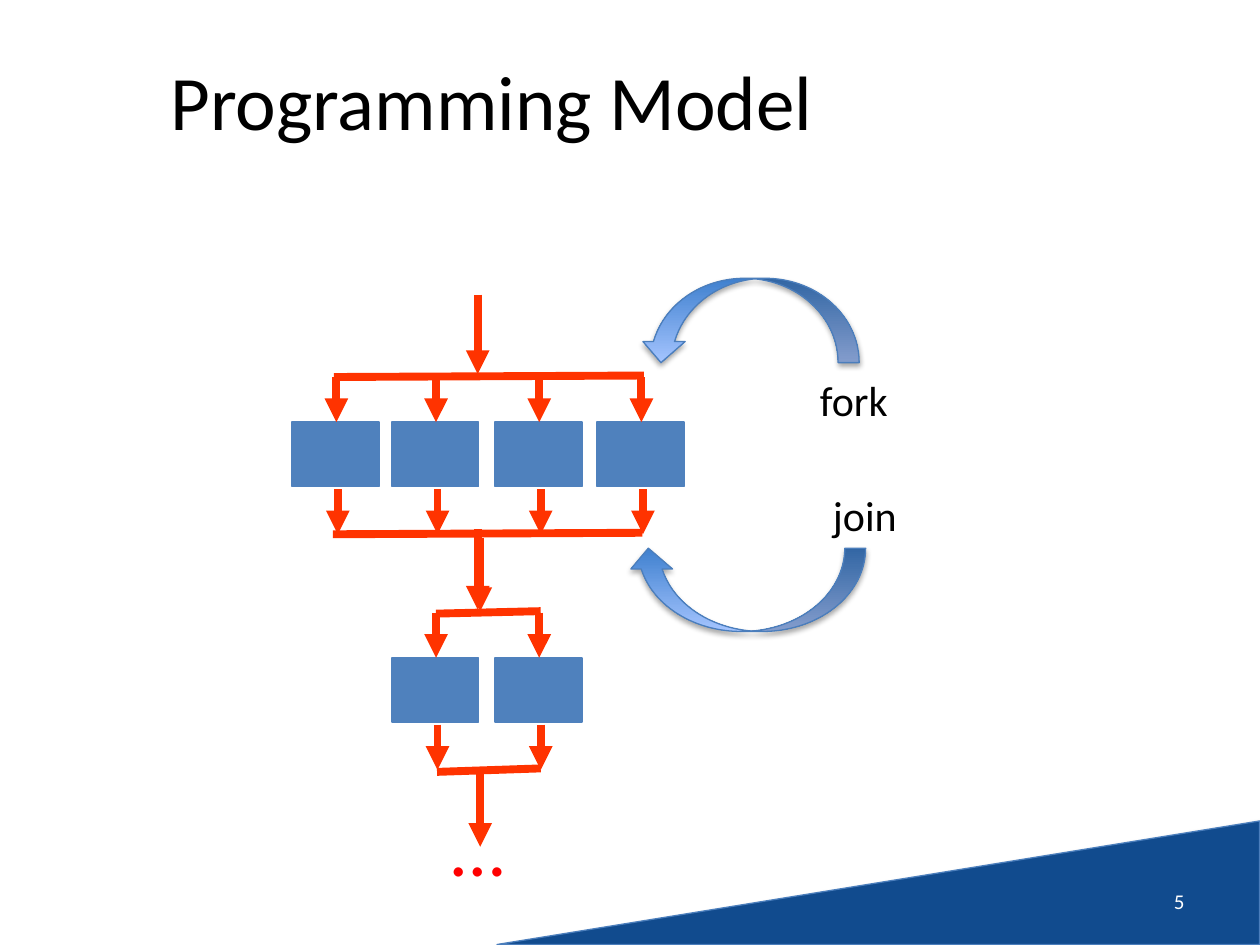
from lxml.etree import SubElement
from pptx import Presentation
from pptx.dml.color import RGBColor
from pptx.enum.shapes import MSO_CONNECTOR as Connector, MSO_SHAPE as Shape
from pptx.enum.text import MSO_ANCHOR as Anchor, MSO_AUTO_SIZE as AutoSize, PP_ALIGN as Align
from pptx.oxml.ns import qn
from pptx.util import Cm, Pt

COLORS = {
    "corner": "114B8E", "outline": "4B7EBC", "task": "4F81BD",
    "flow": "FF3300", "dots": "FF0000", "black": "000000", "white": "FFFFFF",
    "curve_start": "3F80CE", "curve_end": "A4C4FF",
}
FONT = "Calibri"

# Task grid, in centimetres
TASK_LEFTS = [5.89, 7.9, 9.98, 12.04]
TASK_W, TASK_H = 1.75, 1.3
IN_X, OUT_X = 0.89, 0.92        # arrow offsets from a task's left edge
IN_RISE = 0.91                  # fork bar above a task's top
OUT_START, OUT_END = 1.35, 2.26 # arrow below a task's top


def rgb(name):
    return RGBColor.from_string(COLORS[name])


def add_text(slide, text, box, size, color="black", align=Align.LEFT,
             anchor=Anchor.TOP, wrap=False):
    frame = slide.shapes.add_textbox(*map(Cm, box)).text_frame
    frame.word_wrap = wrap
    frame.auto_size = AutoSize.NONE if wrap else AutoSize.SHAPE_TO_FIT_TEXT
    frame.vertical_anchor = anchor
    paragraph = frame.paragraphs[0]
    paragraph.text = text
    paragraph.alignment = align
    paragraph.font.name = FONT
    paragraph.font.size = Pt(size)
    paragraph.font.color.rgb = rgb(color)


def add_outlined(slide, kind, box, outline, width, rotation=0):
    shape = slide.shapes.add_shape(kind, *map(Cm, box))
    shape.rotation = rotation
    shape.shadow.inherit = False
    shape.line.color.rgb = rgb(outline)
    shape.line.width = Pt(width)
    return shape


def fill_solid(shape, color):
    shape.fill.solid()
    shape.fill.fore_color.rgb = rgb(color)


def add_soft_shadow(shape):
    effects = shape._element.spPr.find(qn("a:effectLst"))
    shadow = SubElement(effects, qn("a:outerShdw"), blurRad="40000",
                        dist="23000", dir="5400000", rotWithShape="0")
    color = SubElement(shadow, qn("a:srgbClr"), val=COLORS["black"])
    SubElement(color, qn("a:alpha"), val="35000")


def add_curved_arrow(slide, kind, box):
    arrow = add_outlined(slide, kind, box, "outline", 0.75, rotation=180)
    arrow.fill.gradient()
    arrow.fill.gradient_angle = 90
    for stop, color in zip(arrow.fill.gradient_stops, ("curve_start", "curve_end")):
        stop.color.rgb = rgb(color)
    add_soft_shadow(arrow)


def add_flow(slide, x1, y1, x2, y2, arrow=True):
    flow = slide.shapes.add_connector(Connector.STRAIGHT, *map(Cm, (x1, y1, x2, y2)))
    flow.line.color.rgb = rgb("flow")
    flow.line.width = Pt(4.5)
    if arrow:
        SubElement(flow.line._get_or_add_ln(), qn("a:tailEnd"), type="triangle")
    SubElement(flow._element.spPr, qn("a:effectLst"))


def add_stage(slide, lefts, top, entry, fork_bar, join_bar):
    """One fork-join stage: entry arrow, parallel tasks, bars and exit arrow."""
    add_flow(slide, 9.63, top + entry[0], 9.63, top + entry[1])
    for left in lefts:
        task = add_outlined(slide, Shape.RECTANGLE, (left, top, TASK_W, TASK_H), "task", 1)
        fill_solid(task, "task")
        add_flow(slide, left + OUT_X, top + OUT_START, left + OUT_X, top + OUT_END)
        add_flow(slide, left + IN_X, top - IN_RISE, left + IN_X, top)
    for x1, y1, x2, y2 in (fork_bar, join_bar):
        add_flow(slide, x1, top + y1, x2, top + y2, arrow=False)
    add_flow(slide, 9.68, top + 2.34, 9.68, top + 3.81)


def main():
    prs = Presentation()
    prs.slide_width, prs.slide_height = Cm(25.4), Cm(19.05)
    slide = prs.slides.add_slide(prs.slide_layouts[6])

    # Corner decoration, title and page number
    corner = add_outlined(slide, Shape.RIGHT_TRIANGLE, (16.46, 10.11, 2.49, 15.37),
                          "outline", 0.75, rotation=270)
    fill_solid(corner, "corner")
    add_soft_shadow(corner)
    add_text(slide, "Programming Model", (0.48, 0.33, 18.87, 3.35), 44,
             align=Align.CENTER, anchor=Anchor.MIDDLE, wrap=True)
    add_text(slide, "5", (18.21, 17.65, 5.92, 1.02), 12, "white",
             align=Align.RIGHT, anchor=Anchor.MIDDLE, wrap=True)

    # Four parallel tasks, then two
    add_stage(slide, TASK_LEFTS, 8.51, (-2.57, -0.97),
              (12.98, -0.94, 6.73, -0.91), (12.95, 2.23, 6.71, 2.26))
    add_stage(slide, TASK_LEFTS[1:3], 13.26, (-2.59, -0.97),
              (10.9, -0.94, 8.79, -0.89), (10.9, 2.23, 8.81, 2.3))
    add_text(slide, "…", (8.86, 16, 1.6, 2.13), 44, "dots")

    # Fork and join labels with their curved arrows
    add_text(slide, "fork", (16.28, 7.42, 1.9, 1.27), 24)
    add_text(slide, "join", (16.54, 9.75, 1.85, 1.27), 24)
    add_curved_arrow(slide, Shape.CURVED_UP_ARROW, (12.9, 5.61, 4.42, 1.7))
    add_curved_arrow(slide, Shape.CURVED_DOWN_ARROW, (12.65, 11.05, 4.8, 1.68))

    prs.save("out.pptx")


if __name__ == "__main__":
    main()
